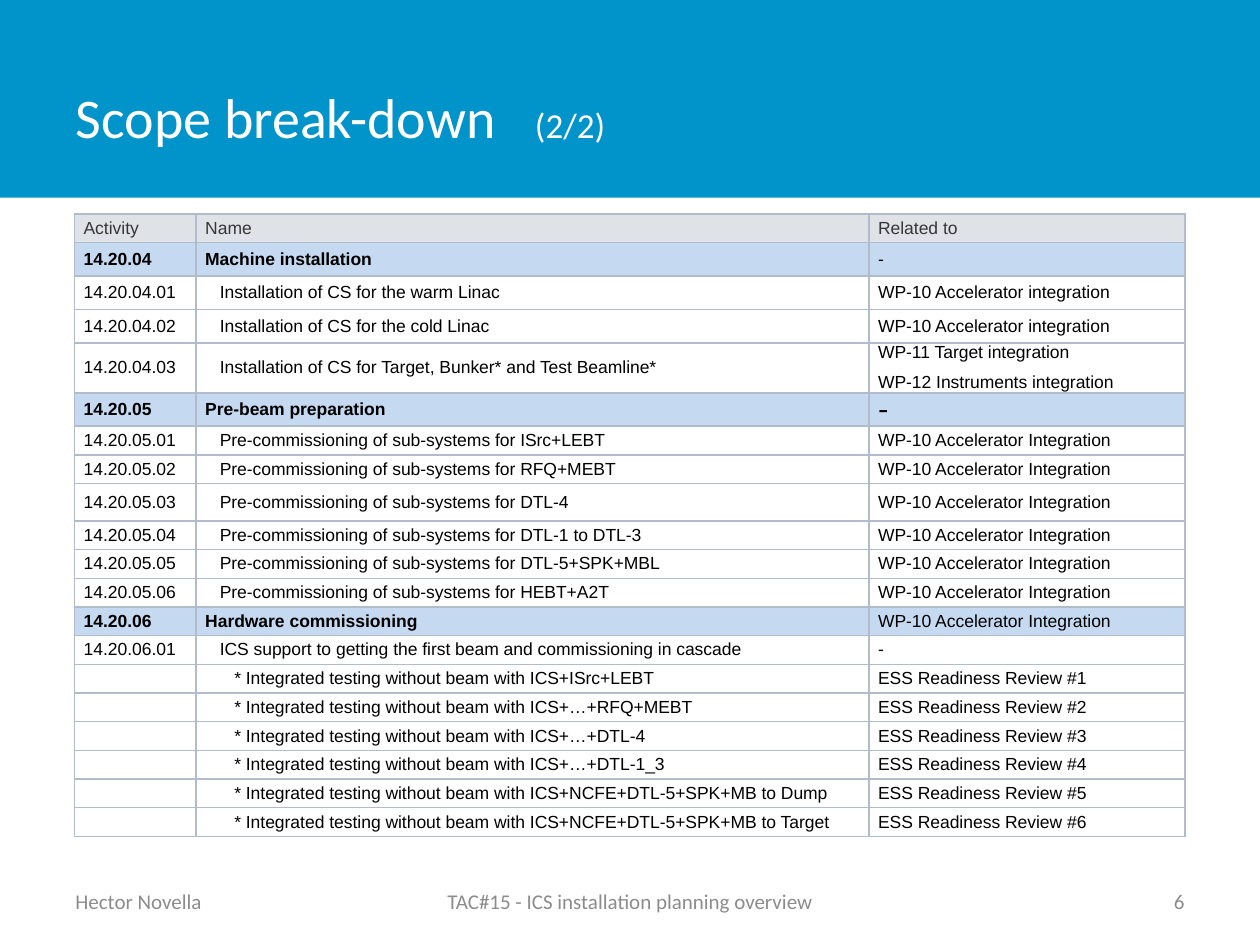
from dataclasses import dataclass

import lxml.etree
import pptx
import pptx.dml.color
import pptx.enum.shapes
import pptx.enum.text
import pptx.oxml.ns
import pptx.util

Pt = pptx.util.Pt
RGBColor = pptx.dml.color.RGBColor
Align = pptx.enum.text.PP_ALIGN
Anchor = pptx.enum.text.MSO_ANCHOR
qn = pptx.oxml.ns.qn

BAND_BLUE = RGBColor(0x00, 0x94, 0xCA)
WHITE = RGBColor(0xFF, 0xFF, 0xFF)
BLACK = RGBColor(0x00, 0x00, 0x00)
HEADER_GREY = RGBColor(0xDF, 0xE3, 0xE8)
HEADER_TEXT = RGBColor(0x36, 0x36, 0x36)
SECTION_BLUE = RGBColor(0xC5, 0xD9, 0xF1)
BORDER = RGBColor(0xB1, 0xBB, 0xCC)
FOOTER_GREY = RGBColor(0x8C, 0x8C, 0x8C)

LOW, MEDIUM, HIGH, DOUBLE = 16.4, 19.1, 21.4, 28.6
LEVEL_INDENT = 8.3
COLUMN_WIDTHS = (69.5, 384.5, 180.6)
ACCELERATOR = "WP-10 Accelerator Integration"


@dataclass
class Activity:
    code: str
    name: str
    related: str
    height: float = LOW
    level: int = 1
    fill: RGBColor = WHITE
    color: RGBColor = BLACK
    bold: bool = False


@dataclass
class Footer:
    text: str
    left: float
    width: float
    align: Align


def section(code: str, name: str, related: str, height: float = LOW) -> Activity:
    return Activity(code, name, related, height, 0, SECTION_BLUE, bold=True)


# Content
PRE_BEAM = ("ISrc+LEBT", "RFQ+MEBT", "DTL-4", "DTL-1 to DTL-3", "DTL-5+SPK+MBL", "HEBT+A2T")
TESTED = ("ISrc+LEBT", "…+RFQ+MEBT", "…+DTL-4", "…+DTL-1_3",
          "NCFE+DTL-5+SPK+MB to Dump", "NCFE+DTL-5+SPK+MB to Target")
ACTIVITIES = [
    Activity("Activity", "Name", "Related to", LOW, 0, HEADER_GREY, HEADER_TEXT),
    section("14.20.04", "Machine installation", "-", MEDIUM),
    Activity("14.20.04.01", "Installation of CS for the warm Linac",
             "WP-10 Accelerator integration", MEDIUM),
    Activity("14.20.04.02", "Installation of CS for the cold Linac",
             "WP-10 Accelerator integration", MEDIUM),
    Activity("14.20.04.03", "Installation of CS for Target, Bunker* and Test Beamline*",
             "WP-11 Target integration\nWP-12 Instruments integration", DOUBLE),
    section("14.20.05", "Pre-beam preparation", "-", MEDIUM),
    *(Activity(f"14.20.05.{number:02}", f"Pre-commissioning of sub-systems for {system}",
               ACCELERATOR, HIGH if system == "DTL-4" else LOW)
      for number, system in enumerate(PRE_BEAM, 1)),
    section("14.20.06", "Hardware commissioning", ACCELERATOR),
    Activity("14.20.06.01",
             "ICS support to getting the first beam and commissioning in cascade", "-"),
    *(Activity("", f"* Integrated testing without beam with ICS+{system}",
               f"ESS Readiness Review #{number}", level=2)
      for number, system in enumerate(TESTED, 1)),
]
FOOTERS = [
    Footer("Hector Novella", 36, 168, Align.LEFT),
    Footer("TAC#15 - ICS installation planning overview", 246, 228, Align.CENTER),
    Footer("6", 516, 168, Align.RIGHT),
]


def style_font(font, name: str, size: float, color: RGBColor, bold: bool = False) -> None:
    font.name, font.size, font.bold = name, Pt(size), bold
    font.color.rgb = color


def add_borders(cell) -> None:
    properties = cell._tc.get_or_add_tcPr()
    for side in ("lnL", "lnR", "lnT", "lnB"):
        line = lxml.etree.SubElement(properties, qn(f"a:{side}"), w=str(Pt(1)))
        fill = lxml.etree.SubElement(line, qn("a:solidFill"))
        lxml.etree.SubElement(fill, qn("a:srgbClr"), val=str(BORDER))


def fill_cell(cell, text: str, activity: Activity, column: int) -> None:
    add_borders(cell)
    cell.fill.solid()
    cell.fill.fore_color.rgb = activity.fill
    cell.margin_left = cell.margin_right = Pt(5.2)
    cell.margin_top = cell.margin_bottom = 0
    cell.vertical_anchor = Anchor.MIDDLE
    cell.text_frame.text = text
    large_dash = activity.code == "14.20.05" and column == 2
    font_name, size = ("Cabin", 14) if large_dash else ("Arial", 10)
    for index, paragraph in enumerate(cell.text_frame.paragraphs):
        paragraph.space_after = Pt(3)
        if index:
            paragraph.space_before = Pt(3)
        if column == 1 and activity.level:
            paragraph._p.get_or_add_pPr().set("marL", str(Pt(LEVEL_INDENT * activity.level)))
        for run in paragraph.runs:
            style_font(run.font, font_name, size, activity.color,
                       activity.bold and column < 2)
        # Keeps empty cells as low as the others
        lxml.etree.SubElement(paragraph._p, qn("a:endParaRPr"), sz=str(size * 100))


def add_activity_table(slide, activities: list[Activity]) -> None:
    table = slide.shapes.add_table(
        len(activities), len(COLUMN_WIDTHS), Pt(42.6), Pt(122.3),
        Pt(sum(COLUMN_WIDTHS)), Pt(sum(a.height for a in activities))).table
    table.first_row = table.horz_banding = False
    for column, width in zip(table.columns, COLUMN_WIDTHS):
        column.width = Pt(width)
    for row, activity in zip(table.rows, activities):
        row.height = Pt(activity.height)
        texts = (activity.code, activity.name, activity.related)
        for column, (cell, text) in enumerate(zip(row.cells, texts)):
            fill_cell(cell, text, activity, column)


def add_title(slide) -> None:
    title = slide.shapes.title
    title.left, title.top, title.width, title.height = Pt(36), Pt(21.6), Pt(562.3), Pt(90)
    title.text_frame.vertical_anchor = Anchor.MIDDLE
    paragraph = title.text_frame.paragraphs[0]
    paragraph.alignment = Align.LEFT
    tabs = lxml.etree.SubElement(paragraph._p.get_or_add_pPr(), qn("a:tabLst"))
    lxml.etree.SubElement(tabs, qn("a:tab"), pos=str(Pt(262.5)), algn="l")
    for text, size in (("Scope break-down\t", 32), ("(2/2)", 20)):
        run = paragraph.add_run()
        run.text = text
        style_font(run.font, "Calibri", size, WHITE)


def add_band(slide) -> None:
    band = slide.shapes.add_shape(
        pptx.enum.shapes.MSO_SHAPE.RECTANGLE, 0, 0, Pt(720), Pt(113))
    band.shadow.inherit = False
    band.fill.solid()
    band.fill.fore_color.rgb = BAND_BLUE
    band.line.fill.background()
    slide.shapes.title.element.addprevious(band.element)


def add_footer(slide, footer: Footer) -> None:
    frame = slide.shapes.add_textbox(
        Pt(footer.left), Pt(500.5), Pt(footer.width), Pt(28.8)).text_frame
    frame.word_wrap = True
    frame.vertical_anchor = Anchor.MIDDLE
    frame.text = footer.text
    paragraph = frame.paragraphs[0]
    paragraph.alignment = footer.align
    style_font(paragraph.runs[0].font, "Calibri", 12, FOOTER_GREY)


def main() -> None:
    deck = pptx.Presentation()
    deck.slide_width, deck.slide_height = Pt(720), Pt(540)
    slide = deck.slides.add_slide(deck.slide_layouts.get_by_name("Title Only"))
    # Heading
    add_title(slide)
    add_band(slide)
    # Activities and footers
    add_activity_table(slide, ACTIVITIES)
    for footer in FOOTERS:
        add_footer(slide, footer)
    deck.save("out.pptx")


if __name__ == "__main__":
    main()
